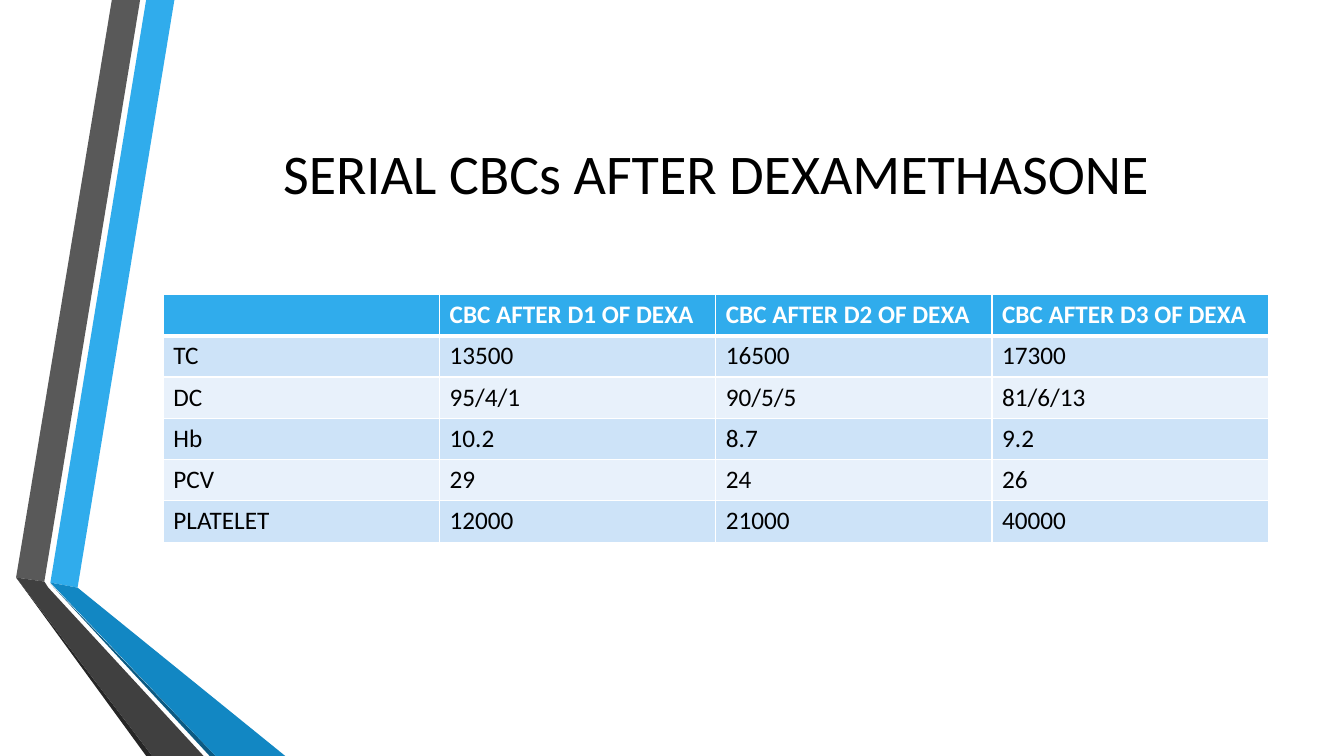
from lxml import etree
from pptx import Presentation
from pptx import util as u
from pptx.dml.color import RGBColor
from pptx.enum import text
from pptx.oxml import ns

# Ribbons at the left edge, back to front: colour and corner points
RIBBONS = [
    ("30ACEC", [(0.5, 5.78), (0.77, 5.83), (1.73, 0), (1.45, 0)]),
    ("595959", [(1.39, 0), (1.11, 0), (0.16, 5.73), (0.44, 5.77)]),
    ("262626", [(0.16, 5.73), (1.45, 7.5), (1.51, 7.5)]),
    ("0C5A82", [(0.5, 5.79), (2.08, 7.5), (2.14, 7.5)]),
    ("1287C3", [(0.5, 5.78), (2.14, 7.5), (2.83, 7.5), (0.77, 5.83)]),
    ("404040", [(2.02, 7.5), (0.48, 5.83), (0.44, 5.77), (0.16, 5.73), (1.51, 7.5)]),
]

BLOOD_COUNTS = [
    ["", *(f"CBC AFTER D{day} OF DEXA" for day in (1, 2, 3))],
    ["TC", "13500", "16500", "17300"],
    ["DC", "95/4/1", "90/5/5", "81/6/13"],
    ["Hb", "10.2", "8.7", "9.2"],
    ["PCV", "29", "24", "26"],
    ["PLATELET", "12000", "21000", "40000"],
]


def color(value):
    return RGBColor.from_string(value)


def write(frame, words, size=18, ink="000000", bold=False, align=text.PP_ALIGN.LEFT):
    paragraph = frame.paragraphs[0]
    paragraph.alignment = align
    paragraph.font.size = u.Pt(size)
    if words:
        run = paragraph.add_run()
        run.text = words
        run.font.name = "Calibri"
        run.font.size = u.Pt(size)
        run.font.bold = bold
        run.font.color.rgb = color(ink)


def border(cell, side, width, ink="FFFFFF"):
    line = etree.SubElement(cell._tc.get_or_add_tcPr(), ns.qn(f"a:ln{side}"), w=str(u.Pt(width)))
    fill = etree.SubElement(line, ns.qn("a:solidFill"))
    etree.SubElement(fill, ns.qn("a:srgbClr"), val=ink)


class CountsSlide:
    header = "30ACEC"
    bands = ("E8F1FB", "CDE3F8")

    def __init__(self, deck):
        self.slide = deck.slides.add_slide(deck.slide_layouts[6])

    def ribbon(self, fill, corners):
        points = [(u.Inches(x), u.Inches(y)) for x, y in corners]
        outline = self.slide.shapes.build_freeform(*points[0])
        outline.add_line_segments(points[1:], close=True)
        ribbon = outline.convert_to_shape()
        ribbon.shadow.inherit = False
        ribbon.fill.solid()
        ribbon.fill.fore_color.rgb = color(fill)
        ribbon.line.fill.background()

    def title(self, words, left, top, width, height):
        box = self.slide.shapes.add_textbox(*map(u.Inches, (left, top, width, height)))
        box.text_frame.word_wrap = True
        box.text_frame.vertical_anchor = text.MSO_ANCHOR.MIDDLE
        write(box.text_frame, words, size=40, align=text.PP_ALIGN.CENTER)

    def table(self, rows, left, top, column_width, row_height):
        columns = len(rows[0])
        table = self.slide.shapes.add_table(
            len(rows), columns, u.Inches(left), u.Inches(top),
            u.Inches(column_width * columns), u.Inches(row_height * len(rows))).table
        for column in table.columns:
            column.width = u.Inches(column_width)
        for r, values in enumerate(rows):
            table.rows[r].height = u.Inches(row_height)
            heading = r == 0
            for c, value in enumerate(values):
                cell = table.cell(r, c)
                # Thick rule between the heading and the first row
                for side, width in (("L", 1), ("R", 1), ("T", 3 if r == 1 else 1),
                                    ("B", 3 if heading else 1)):
                    border(cell, side, width)
                cell.fill.solid()
                cell.fill.fore_color.rgb = color(self.header if heading else self.bands[r % 2])
                write(cell.text_frame, value, ink="FFFFFF" if heading else "000000", bold=heading)


def main():
    deck = Presentation()
    deck.slide_width, deck.slide_height = u.Inches(13.33), u.Inches(7.5)
    page = CountsSlide(deck)
    for fill, corners in RIBBONS:
        page.ribbon(fill, corners)
    page.title("SERIAL CBCs AFTER DEXAMETHASONE", 1.62, 0.75, 10.96, 1.92)
    page.table(BLOOD_COUNTS, 1.62, 2.92, column_width=2.74, row_height=0.41)
    deck.save("out.pptx")


if __name__ == "__main__":
    main()
